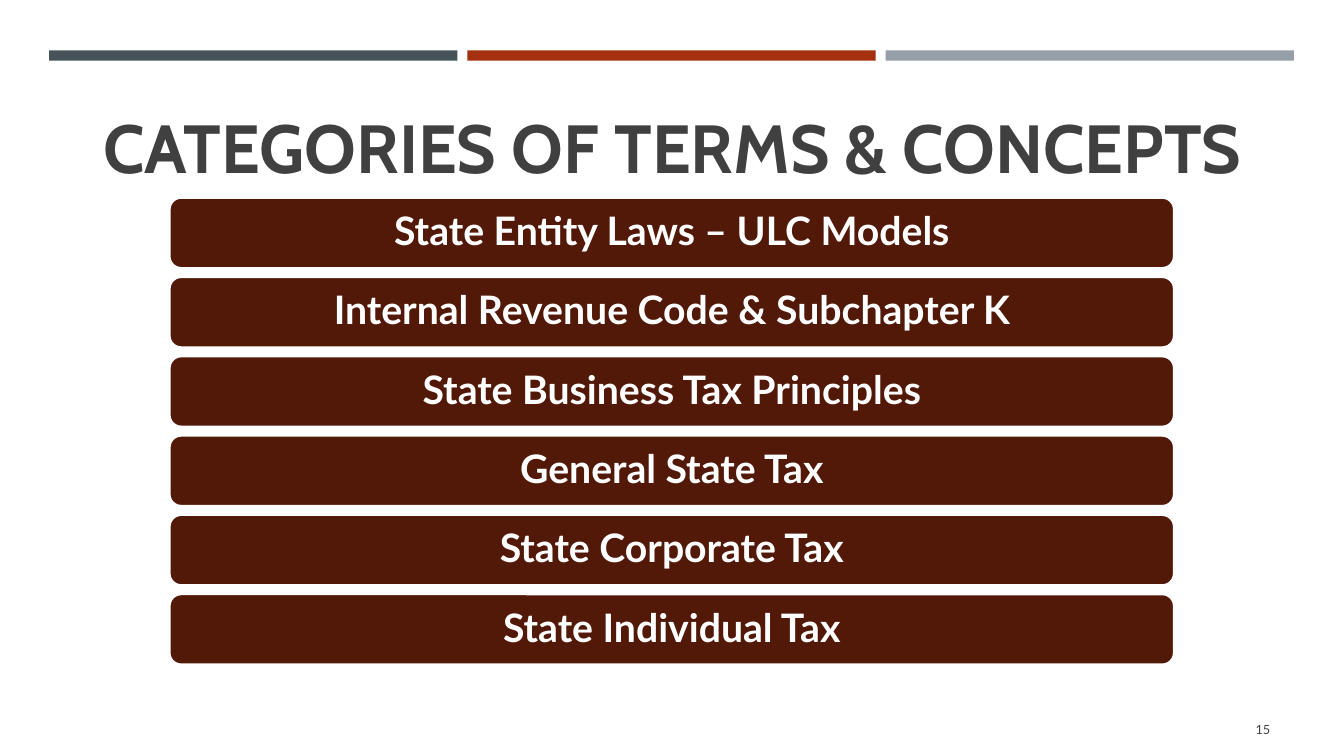
from pptx import Presentation
from pptx.dml.color import RGBColor
from pptx.enum.shapes import MSO_SHAPE
from pptx.enum.text import MSO_ANCHOR, MSO_AUTO_SIZE, PP_ALIGN
from pptx.util import Cm, Pt

SLATE = RGBColor(0x46, 0x53, 0x59)
RUST = RGBColor(0xA5, 0x30, 0x0F)
GREY = RGBColor(0x96, 0x9F, 0xA7)
MAROON = RGBColor(0x52, 0x18, 0x08)
DARK = RGBColor(0x40, 0x40, 0x40)
WHITE = RGBColor(0xFF, 0xFF, 0xFF)

CATEGORIES = [
    "State Entity Laws – ULC Models",
    "Internal Revenue Code & Subchapter K",
    "State Business Tax Principles",
    "General State Tax",
    "State Corporate Tax",
    "State Individual Tax",
]

TITLE_FONT = {"name": "Cabin", "size": Pt(48.6), "bold": True}
CATEGORY_FONT = {"name": "Lato", "size": Pt(28), "bold": True}
NUMBER_FONT = {"name": "Lato", "size": Pt(9), "bold": False}
CATEGORY_SPACING = {"line_spacing": 0.9, "space_after": Pt(9.8)}


def set_all(obj, values):
    """Set each named attribute of an object."""
    for name, value in values.items():
        setattr(obj, name, value)


def write(sp, text, font, color, align, anchor, inset, spacing=None):
    """Put one formatted paragraph into a shape."""
    tf = sp.text_frame
    set_all(tf, {"word_wrap": True, "auto_size": MSO_AUTO_SIZE.NONE,
                 "vertical_anchor": anchor, "margin_left": inset,
                 "margin_right": inset, "margin_top": inset,
                 "margin_bottom": inset})
    p = tf.paragraphs[0]
    set_all(p, {"alignment": align, **(spacing or {})})
    r = p.add_run()
    r.text = text
    set_all(r.font, font)
    r.font.color.rgb = color


def add_block(s, kind, box, fill):
    """Add a filled shape without shadow or outline."""
    sp = s.shapes.add_shape(kind, *box)
    sp.shadow.inherit = False
    sp.fill.solid()
    sp.fill.fore_color.rgb = fill
    sp.line.fill.background()
    return sp


def add_top_bars(s, left, top, width, height):
    """Divide the box into three coloured bars."""
    gap = Cm(0.25)
    bar = (width - 2 * gap) // 3
    for i, color in enumerate((SLATE, RUST, GREY)):
        box = (left + i * (bar + gap), top, bar, height)
        add_block(s, MSO_SHAPE.RECTANGLE, box, color)


def add_title(s, left, top, width, height):
    """Place and format the title placeholder."""
    sp = s.shapes.title
    set_all(sp, {"left": left, "top": top, "width": width, "height": height})
    write(sp, "CATEGORIES OF TERMS & CONCEPTS", TITLE_FONT, DARK,
          PP_ALIGN.CENTER, MSO_ANCHOR.BOTTOM, Cm(0.1))


def add_categories(s, left, top, width, height):
    """Stack the category bands evenly in the box."""
    band = Cm(1.78)
    pitch = (height - band) // (len(CATEGORIES) - 1)
    for i, text in enumerate(CATEGORIES):
        box = (left, top + i * pitch, width, band)
        sp = add_block(s, MSO_SHAPE.ROUNDED_RECTANGLE, box, MAROON)
        sp.line.color.rgb = WHITE
        sp.line.width = Pt(1.75)
        write(sp, text, CATEGORY_FONT, WHITE, PP_ALIGN.CENTER,
              MSO_ANCHOR.MIDDLE, Cm(0.3), CATEGORY_SPACING)


def add_slide_number(s, left, top, width, height):
    """Write the slide number at the right of the box."""
    sp = s.shapes.add_textbox(left, top, width, height)
    write(sp, "15", NUMBER_FONT, DARK, PP_ALIGN.RIGHT,
          MSO_ANCHOR.MIDDLE, Cm(0.25))


def main():
    """Build and save the slide."""
    prs = Presentation()
    prs.slide_width, prs.slide_height = Cm(33.87), Cm(19.05)
    s = prs.slides.add_slide(prs.slide_layouts[5])
    add_top_bars(s, Cm(1.24), Cm(1.27), Cm(31.37), Cm(0.26))
    add_title(s, Cm(2.34), Cm(1.14), Cm(29.2), Cm(3.68))
    add_categories(s, Cm(4.27), Cm(4.98), Cm(25.32), Cm(11.77))
    add_slide_number(s, Cm(29.34), Cm(17.86), Cm(2.92), Cm(1.02))
    prs.save("out.pptx")


if __name__ == "__main__":
    main()
